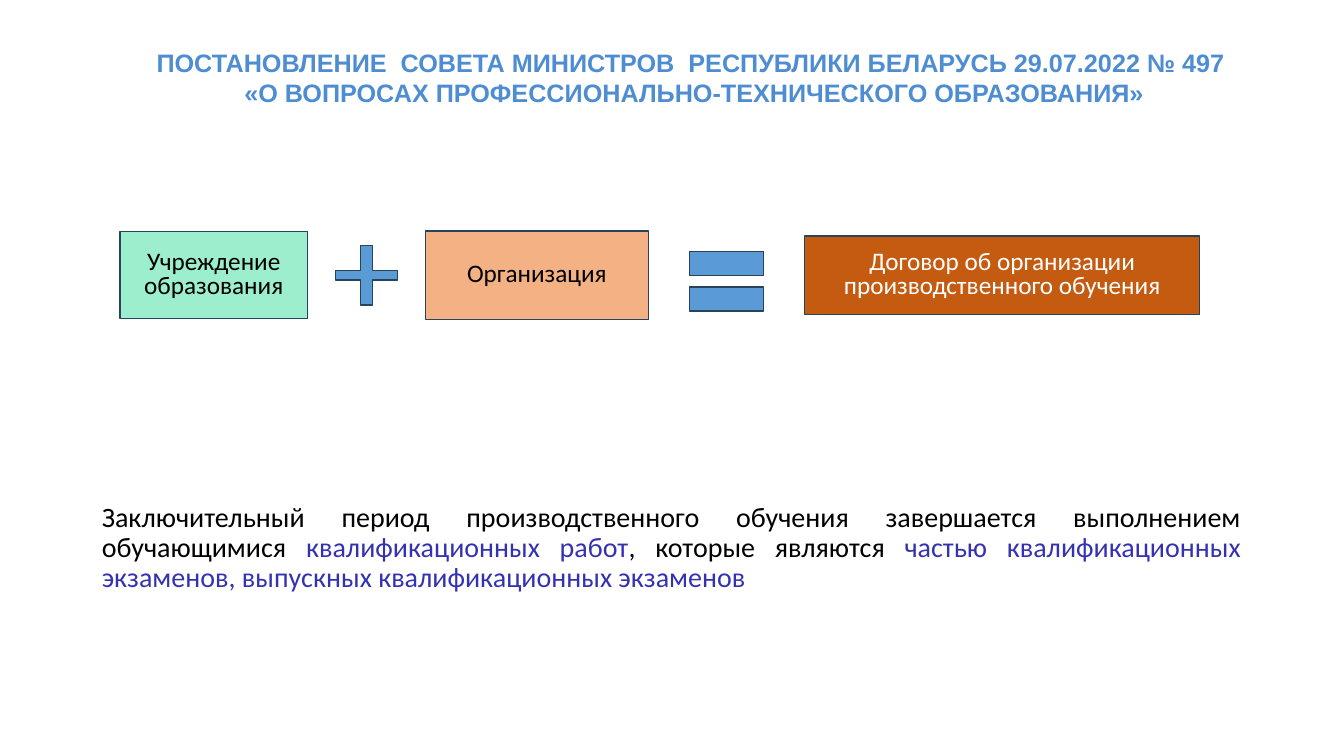
import pptx
import pptx.util
import pptx.dml.color
import pptx.enum.shapes
import pptx.enum.text
import lxml.etree

Inches, Pt = pptx.util.Inches, pptx.util.Pt
PRESET = pptx.enum.shapes.MSO_SHAPE
ALIGN = pptx.enum.text.PP_ALIGN
ANCHOR = pptx.enum.text.MSO_ANCHOR

COLORS = {
    "title": "4E8DD1", "black": "000000", "white": "FFFFFF",
    "accent": "3532B2", "outline": "28445D", "operator": "5B9BD5",
    "school": "9CEECD", "company": "F4B183", "contract": "C55A11",
}


def rgb(name):
    return pptx.dml.color.RGBColor.from_string(COLORS[name])


def place(shape, left, top, width, height):
    shape.left, shape.top = Inches(left), Inches(top)
    shape.width, shape.height = Inches(width), Inches(height)


def add_heading(slide, left, top, width, height):
    heading = slide.shapes.title
    place(heading, left, top, width, height)
    frame = heading.text_frame
    frame.word_wrap = True
    frame.auto_size = pptx.enum.text.MSO_AUTO_SIZE.NONE
    frame.vertical_anchor = ANCHOR.TOP
    decree = frame.paragraphs[0]
    decree.text = ("ПОСТАНОВЛЕНИЕ  СОВЕТА МИНИСТРОВ  РЕСПУБЛИКИ БЕЛАРУСЬ 29.07.2022 № 497 \v"
                   "«О ВОПРОСАХ ПРОФЕССИОНАЛЬНО-ТЕХНИЧЕСКОГО ОБРАЗОВАНИЯ»")
    decree.alignment = ALIGN.CENTER
    decree.font.name, decree.font.size, decree.font.bold = "Arial", Pt(18), True
    decree.font.color.rgb = rgb("title")


def add_part(slide, preset, fill, left, top, width, height):
    part = slide.shapes.add_shape(preset, Inches(left), Inches(top),
                                  Inches(width), Inches(height))
    part.shadow.inherit = False
    part.fill.solid()
    part.fill.fore_color.rgb = rgb(fill)
    part.line.color.rgb = rgb("outline")
    part.line.width = Pt(1)
    return part


def write_label(part, label, color):
    frame = part.text_frame
    frame.word_wrap = True
    frame.vertical_anchor = ANCHOR.MIDDLE
    line = frame.paragraphs[0]
    line.text = label
    line.alignment = ALIGN.CENTER
    line.line_spacing = 0.8
    line.font.name, line.font.size = "Calibri", Pt(18)
    line.font.color.rgb = rgb(color)


def add_equation(slide, left, middle, width):
    """Spread the terms and signs over the width with equal gaps, around one middle line."""
    # preset, fill, width, height, offset from the middle line, label, label colour
    terms = [
        (PRESET.RECTANGLE, "school", 1.86, 0.86, 0, "Учреждение образования", "black"),
        (PRESET.CROSS, "operator", 0.62, 0.59, 0, None, None),
        (PRESET.RECTANGLE, "company", 2.21, 0.88, 0, "Организация", "black"),
        (PRESET.MATH_EQUAL, "operator", 1, 1, 0.06, None, None),
        (PRESET.RECTANGLE, "contract", 3.92, 0.78, 0,
         "Договор об организации производственного обучения", "white"),
    ]
    gap = (width - sum(term[2] for term in terms)) / (len(terms) - 1)
    for preset, fill, term_width, height, offset, label, color in terms:
        top = middle + offset - height / 2
        part = add_part(slide, preset, fill, left, top, term_width, height)
        if label:
            write_label(part, label, color)
        if preset == PRESET.CROSS:
            part.adjustments[0] = 0.42
        left += term_width + gap


def add_conclusion(slide, left, top, width, height):
    body = slide.placeholders[1]
    place(body, left, top, width, height)
    frame = body.text_frame
    frame.word_wrap = True
    frame.auto_size = pptx.enum.text.MSO_AUTO_SIZE.NONE
    conclusion = frame.paragraphs[0]
    conclusion.alignment = ALIGN.JUSTIFY
    conclusion.line_spacing = 0.9
    conclusion.space_before = Pt(0)
    properties = conclusion._p.get_or_add_pPr()
    properties.set("marL", "0")
    properties.set("indent", "0")
    lxml.etree.SubElement(properties, pptx.oxml.ns.qn("a:buNone"))
    conclusion.font.name, conclusion.font.size = "Calibri", Pt(20)
    for words, color in [
        ("Заключительный период производственного обучения завершается "
         "выполнением обучающимися ", "black"),
        ("квалификационных работ", "accent"),
        (", которые являются ", "black"),
        ("частью квалификационных экзаменов, выпускных квалификационных экзаменов", "accent"),
    ]:
        run = conclusion.add_run()
        run.text = words
        run.font.color.rgb = rgb(color)


def main():
    deck = pptx.Presentation()
    deck.slide_width, deck.slide_height = Inches(13.33), Inches(7.5)
    slide = deck.slides.add_slide(deck.slide_layouts[1])
    add_heading(slide, 1.44, 0.42, 10.89, 0.71)
    add_equation(slide, 1.19, 2.73, 10.71)
    add_conclusion(slide, 0.91, 4.94, 11.5, 1.19)
    deck.save("out.pptx")


if __name__ == "__main__":
    main()
